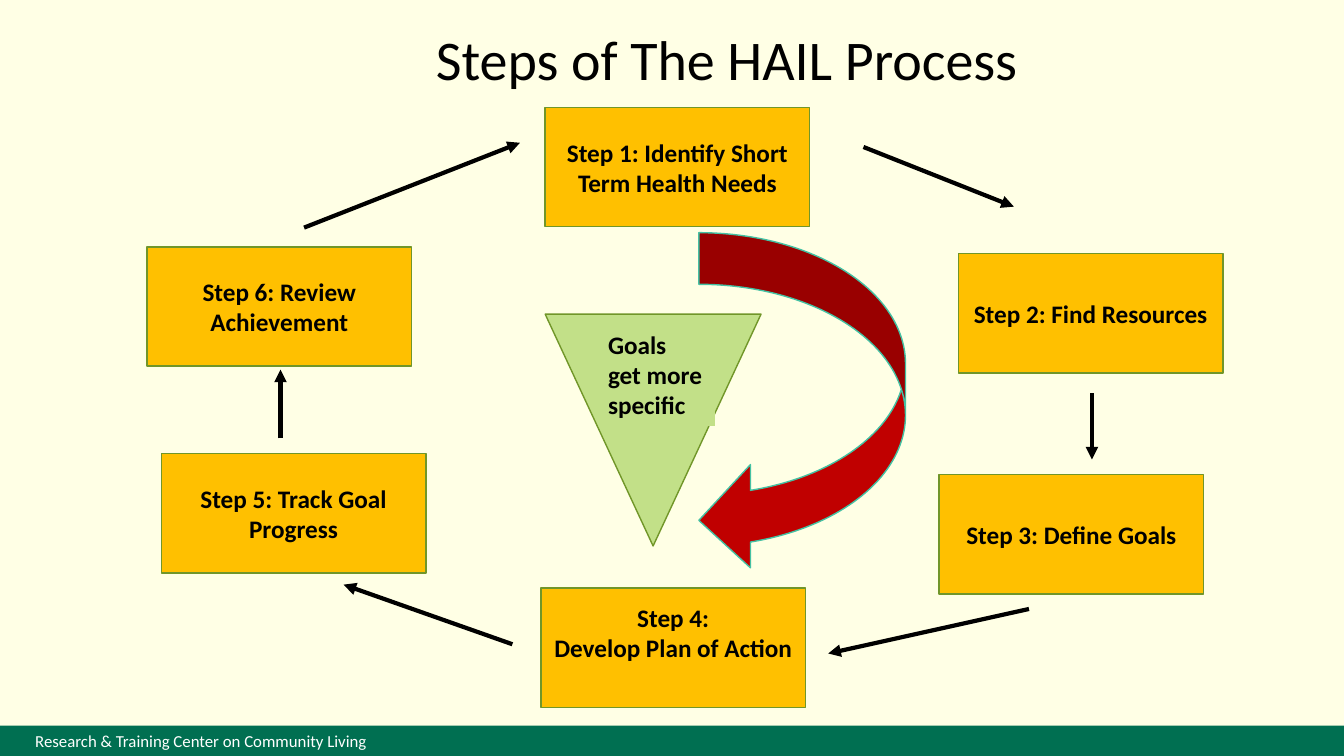
import pptx
import pptx.dml.color
import pptx.enum.shapes
import pptx.enum.text
import pptx.oxml
import pptx.oxml.ns
import pptx.util
import lxml.etree

THEME = {
    "font": "Calibri",
    "background": "FFFFE5",
    "footer": "006F51",
    "step": "FFC000",
    "step_line": "719629",
    "goal": "C2E088",
    "sweep": "C00000",
    "sweep_line": "44C1A3",
    "ink": "000000",
    "paper": "FFFFFF",
    "title_size": 40,
    "body_size": 18,
    "footer_size": 12,
}
KINDS = pptx.enum.shapes.MSO_SHAPE
ALIGN = pptx.enum.text.PP_ALIGN
ANCHOR = pptx.enum.text.MSO_ANCHOR
color = pptx.dml.color.RGBColor.from_string

presentation = pptx.Presentation()
presentation.slide_width = pptx.util.Inches(13.33)
presentation.slide_height = pptx.util.Inches(7.5)
column = presentation.slide_width / 160
row = presentation.slide_height / 90

slide = presentation.slides.add_slide(presentation.slide_layouts[6])
slide.background.fill.solid()
slide.background.fill.fore_color.rgb = color(THEME["background"])


def write(shape, text, size="body_size", ink="ink", bold=True,
          align=ALIGN.LEFT, anchor=ANCHOR.TOP, wrap=True):
    frame = shape.text_frame
    frame.word_wrap = wrap
    frame.vertical_anchor = anchor
    frame.text = text
    for paragraph in frame.paragraphs:
        paragraph.alignment = align
        paragraph.font.name = THEME["font"]
        paragraph.font.size = pptx.util.Pt(THEME[size])
        paragraph.font.bold = bold
        paragraph.font.color.rgb = color(THEME[ink])


def draw(kind, left, top, width, height, fill, line=None):
    shape = slide.shapes.add_shape(
        kind, int(left * column), int(top * row), int(width * column), int(height * row))
    shape.shadow.inherit = False
    shape.fill.solid()
    shape.fill.fore_color.rgb = color(THEME[fill])
    if line:
        shape.line.color.rgb = color(THEME[line])
        shape.line.width = pptx.util.Pt(1)
    else:
        shape.line.fill.background()
    return shape


footer = draw(KINDS.RECTANGLE, 0, 86.4, 160, 3.6, "footer")
write(footer, "Research & Training Center on Community Living",
      size="footer_size", ink="paper", bold=False)
footer.text_frame.margin_left = int(4.2 * column)

title = slide.shapes.add_textbox(
    int(50.7 * column), int(2.3 * row), int(72.4 * column), int(9.2 * row))
write(title, "Steps of The HAIL Process", size="title_size", bold=False, wrap=False)

steps = [
    (64.9, 12.8, "Step 1: Identify Short Term Health Needs"),
    (114.1, 30.2, "Step 2: Find Resources"),
    (111.8, 56.5, "Step 3: Define Goals"),
    (64.4, 70, "Step 4:\nDevelop Plan of Action"),
    (19.2, 54, "Step 5: Track Goal Progress"),
    (17.5, 29.4, "Step 6: Review Achievement"),
]
for left, top, text in steps:
    box = draw(KINDS.RECTANGLE, left, top, 31.5, 14.2, "step", "step_line")
    write(box, text, align=ALIGN.CENTER, anchor=ANCHOR.MIDDLE)
    if "\n" in text:
        box.text_frame.margin_bottom = int(4.2 * row)

arrows = [
    (102.8, 17.5, 120.7, 24.6),
    (130, 46.8, 130, 54.7),
    (122.5, 72.5, 98.6, 77.8),
    (61, 76.7, 40.9, 69.6),
    (33.4, 52.2, 33.4, 44),
    (36.2, 27.1, 61.9, 17),
]
for start_x, start_y, end_x, end_y in arrows:
    arrow = slide.shapes.add_connector(
        pptx.enum.shapes.MSO_CONNECTOR.STRAIGHT,
        int(start_x * column), int(start_y * row), int(end_x * column), int(end_y * row))
    arrow.line.color.rgb = color(THEME["ink"])
    arrow.line.width = pptx.util.Pt(3)
    outline = arrow.line._get_or_add_ln()
    lxml.etree.SubElement(outline, pptx.oxml.ns.qn("a:tailEnd"), type="triangle")
    lxml.etree.SubElement(arrow._element.spPr, pptx.oxml.ns.qn("a:effectLst"))

draw(KINDS.CURVED_LEFT_ARROW, 83.2, 27.7, 24.6, 40.4, "sweep", "sweep_line")
funnel = draw(KINDS.ISOSCELES_TRIANGLE, 64.9, 37.4, 25.7, 27.6, "goal", "step_line")
funnel.rotation = 180
label = draw(KINDS.RECTANGLE, 71.2, 38.6, 13.9, 12.1, "goal")
write(label, "Goals get more specific")

presentation.save("out.pptx")
